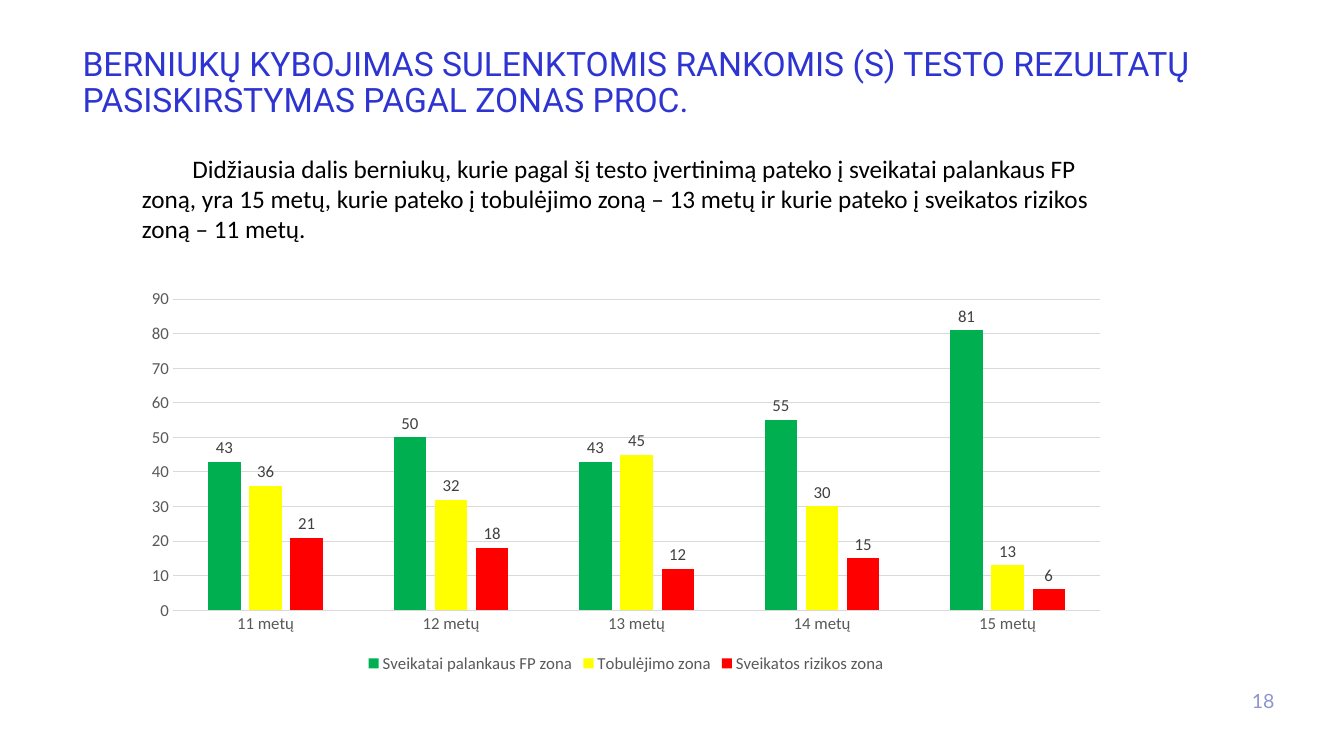
"""Build the slide on boys' flexed-arm hang results by health zone."""
from pptx import Presentation
from pptx.chart.data import CategoryChartData
from pptx.dml.color import RGBColor
from pptx.enum.chart import XL_CHART_TYPE, XL_LABEL_POSITION, XL_LEGEND_POSITION, XL_TICK_MARK
from pptx.enum.text import PP_ALIGN
from pptx.util import Inches, Pt

COLORS = {
    "title": "2E34D1", "number": "8E96CD", "body": "000000",
    "axis": "595959", "grid": "D9D9D9", "label": "404040",
    "green": "00B050", "yellow": "FFFF00", "red": "FF0000",
}
AGES = [f"{age} metų" for age in range(11, 16)]
ZONES = [
    ("Sveikatai palankaus FP zona", (43, 50, 43, 55, 81), "green"),
    ("Tobulėjimo zona", (36, 32, 45, 30, 13), "yellow"),
    ("Sveikatos rizikos zona", (21, 18, 12, 15, 6), "red"),
]
TEXTS = [
    ((0.72, 0.42, 11.41, 1.38), "BERNIUKŲ KYBOJIMAS SULENKTOMIS RANKOMIS (S) TESTO REZULTATŲ "
     "PASISKIRSTYMAS PAGAL ZONAS PROC.", "Roboto", 24, "title", PP_ALIGN.LEFT, 0.9),
    ((1.31, 1.47, 10.05, 1.01), "\tDidžiausia dalis berniukų, kurie pagal šį testo įvertinimą "
     "pateko į sveikatai palankaus FP zoną, yra 15 metų, kurie pateko į tobulėjimo zoną – 13 metų "
     "ir kurie pateko į sveikatos rizikos zoną – 11 metų.", "Calibri", 18, "body", PP_ALIGN.LEFT, 1.0),
    ((12.22, 6.79, 0.52, 0.4), "18", "Lato", 14, "number", PP_ALIGN.RIGHT, 1.0),
]


def rgb(name):
    return RGBColor.from_string(COLORS[name])


def set_font(font, name, size, color):
    font.name, font.size = name, Pt(size)
    font.color.rgb = rgb(color)


prs = Presentation()
prs.slide_width, prs.slide_height = Inches(13.33), Inches(7.5)
s = prs.slides.add_slide(prs.slide_layouts[6])

for box, text, font, size, color, align, spacing in TEXTS:
    tf = s.shapes.add_textbox(*map(Inches, box)).text_frame
    tf.word_wrap = True
    p = tf.paragraphs[0]
    p.text, p.alignment, p.line_spacing = text, align, spacing
    set_font(p.font, font, size, color)

data = CategoryChartData()
data.categories = AGES
for name, values, _ in ZONES:
    data.add_series(name, values)
chart = s.shapes.add_chart(
    XL_CHART_TYPE.COLUMN_CLUSTERED, *map(Inches, (1.31, 2.79, 9.8, 3.93)), data).chart
chart.has_title = False
set_font(chart.font, "Calibri", 12, "axis")
chart.has_legend = True
chart.legend.position = XL_LEGEND_POSITION.BOTTOM
chart.legend.include_in_layout = False
set_font(chart.legend.font, "Calibri", 12, "axis")

for axis in (chart.category_axis, chart.value_axis):
    axis.major_tick_mark = axis.minor_tick_mark = XL_TICK_MARK.NONE
    set_font(axis.tick_labels.font, "Calibri", 12, "axis")
chart.value_axis.minimum_scale, chart.value_axis.maximum_scale = 0, 90
chart.value_axis.major_unit = 10
chart.value_axis.format.line.fill.background()
for line in (chart.category_axis.format.line, chart.value_axis.major_gridlines.format.line):
    line.color.rgb = rgb("grid")
    line.width = Pt(0.75)

plot = chart.plots[0]
plot.gap_width, plot.overlap, plot.vary_by_categories = 219, -27, False
for series, (_, _, color) in zip(plot.series, ZONES):
    series.format.fill.solid()
    series.format.fill.fore_color.rgb = rgb(color)
    labels = series.data_labels
    labels.show_value = True
    labels.position = XL_LABEL_POSITION.OUTSIDE_END
    set_font(labels.font, "Calibri", 12, "label")

prs.save("out.pptx")
